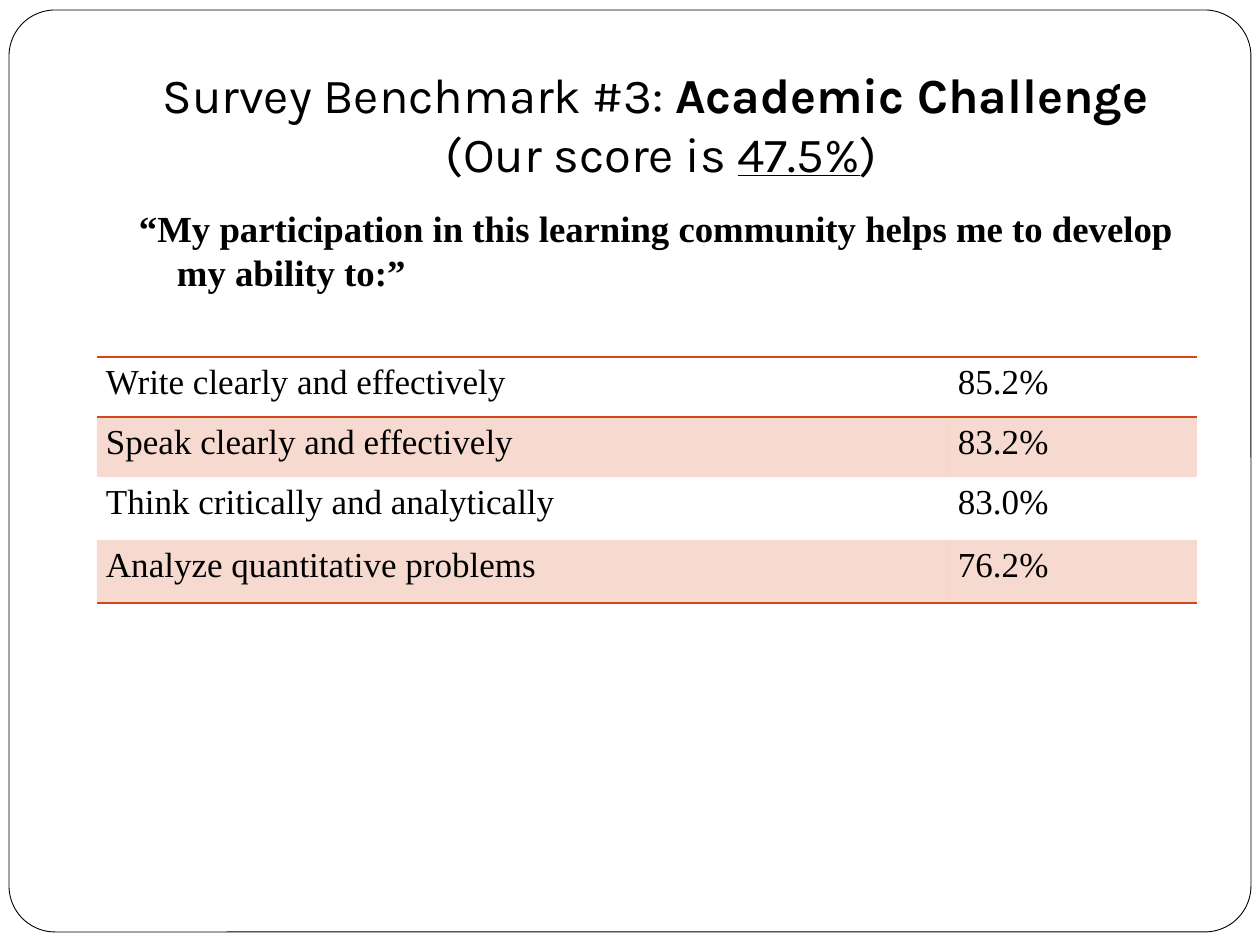
from lxml.etree import SubElement
from pptx import Presentation
from pptx.dml.color import RGBColor
from pptx.enum.shapes import MSO_SHAPE as Shape
from pptx.enum.text import MSO_ANCHOR as Anchor, PP_ALIGN as Align
from pptx.oxml import parse_xml
from pptx.oxml.ns import nsdecls, qn
from pptx.util import Emu, Pt

# Content
TITLE = [
    [("Survey Benchmark #3: ", {}), ("Academic Challenge ", {"bold": True})],
    [("(Our score is ", {}), ("47.5%", {"underline": True}), (")", {})],
]
PROMPT = ("“My participation in this learning community helps me to develop "
          "my ability to:”")
RESULTS = [
    ("Write clearly and effectively", "85.2%"),
    ("Speak clearly and effectively", "83.2%"),
    ("Think critically and analytically", "83.0%"),
    ("Analyze quantitative problems", "76.2%"),
]
COLUMN_WIDTHS = [852, 248]
ROW_HEIGHTS = [60, 60, 63, 63]
RULES = {0: "TB", 3: "B"}  # row: ruled edges
SHADED_ROWS = {1, 3}

BLACK = RGBColor(0x00, 0x00, 0x00)
WHITE = RGBColor(0xFF, 0xFF, 0xFF)
RUST = RGBColor(0xD3, 0x48, 0x17)
HEADING, BODY = "Karla", "Times New Roman"
NO_STYLE = "{2D5ABB26-0587-4C30-8999-92F81FD0307C}"


def px(n):
    return Emu(round(n * 914400 / 126))


def write(frame, lines, font, size, bold=False, align=Align.LEFT,
          anchor=Anchor.TOP, margins=(13, 6, 13, 6), before=0, after=0,
          spacing=1.0, hanging=0):
    """Fill a text frame or cell with one paragraph of lines of runs."""
    (frame.margin_left, frame.margin_top,
     frame.margin_right, frame.margin_bottom) = map(px, margins)
    frame.vertical_anchor = anchor
    text = getattr(frame, "text_frame", frame)
    text.word_wrap = True
    par = text.paragraphs[0]
    par.alignment, par.line_spacing = align, spacing
    par.space_before, par.space_after = Pt(before), Pt(after)
    if hanging:
        props = par._p.get_or_add_pPr()
        props.set("marL", str(px(hanging)))
        props.set("indent", str(-px(hanging)))
    for i, line in enumerate(lines):
        if i:
            par.add_line_break()
        for words, style in line:
            run = par.add_run()
            run.text = words
            run.font.name, run.font.size = font, Pt(size)
            run.font.color.rgb = BLACK
            run.font.bold = style.get("bold", bold)
            run.font.underline = style.get("underline", False)


def rule(cell, edge):
    cell._tc.get_or_add_tcPr().insert(0, parse_xml(
        f'<a:ln{edge} {nsdecls("a")} w="{Pt(1)}"><a:solidFill>'
        f'<a:srgbClr val="{RUST}"/></a:solidFill></a:ln{edge}>'))


def shade(cell):
    cell.fill.solid()
    cell.fill.fore_color.rgb = RUST
    color = next(cell._tc.tcPr.find(qn("a:solidFill")).iter(qn("a:srgbClr")))
    SubElement(color, qn("a:alpha")).set("val", "20000")


prs = Presentation()
prs.slide_width, prs.slide_height = px(1260), px(945)
slide = prs.slides.add_slide(prs.slide_layouts[6])
shapes = slide.shapes

# Rounded page frame
page = shapes.add_shape(Shape.ROUNDED_RECTANGLE, *map(px, (9, 10, 1242, 922)))
page.adjustments[0] = 0.05
page.shadow.inherit = False
page.fill.solid()
page.fill.fore_color.rgb = WHITE
page.line.color.rgb = BLACK
page.line.width = Pt(0.5)

# Title and prompt
title = shapes.add_textbox(*map(px, (126, 38, 1071, 157)))
write(title.text_frame, TITLE, HEADING, 28, align=Align.CENTER,
      anchor=Anchor.BOTTOM, margins=(13, 6, 13, 13))
prompt = shapes.add_textbox(*map(px, (126, 200, 1071, 630)))
write(prompt.text_frame, [[(PROMPT, {})]], BODY, 21, bold=True, before=5.8,
      hanging=38)

# Results table
holder = shapes.add_table(len(RESULTS), len(COLUMN_WIDTHS), px(97), px(357),
                          px(sum(COLUMN_WIDTHS)), px(sum(ROW_HEIGHTS)))
results = holder.table
results.first_row = results.horz_banding = False
next(results._tbl.iter(qn("a:tableStyleId"))).text = NO_STYLE
for column, width in zip(results.columns, COLUMN_WIDTHS):
    column.width = px(width)
for r, (row, height) in enumerate(zip(results.rows, ROW_HEIGHTS)):
    row.height = px(height)
    for cell, words in zip(row.cells, RESULTS[r]):
        write(cell, [[(words, {})]], BODY, 20, margins=(9, 0, 9, 0),
              after=10, spacing=1.15)
        if r in SHADED_ROWS:
            shade(cell)
        else:
            cell.fill.background()
        for edge in reversed(RULES.get(r, "")):
            rule(cell, edge)

prs.save("out.pptx")
